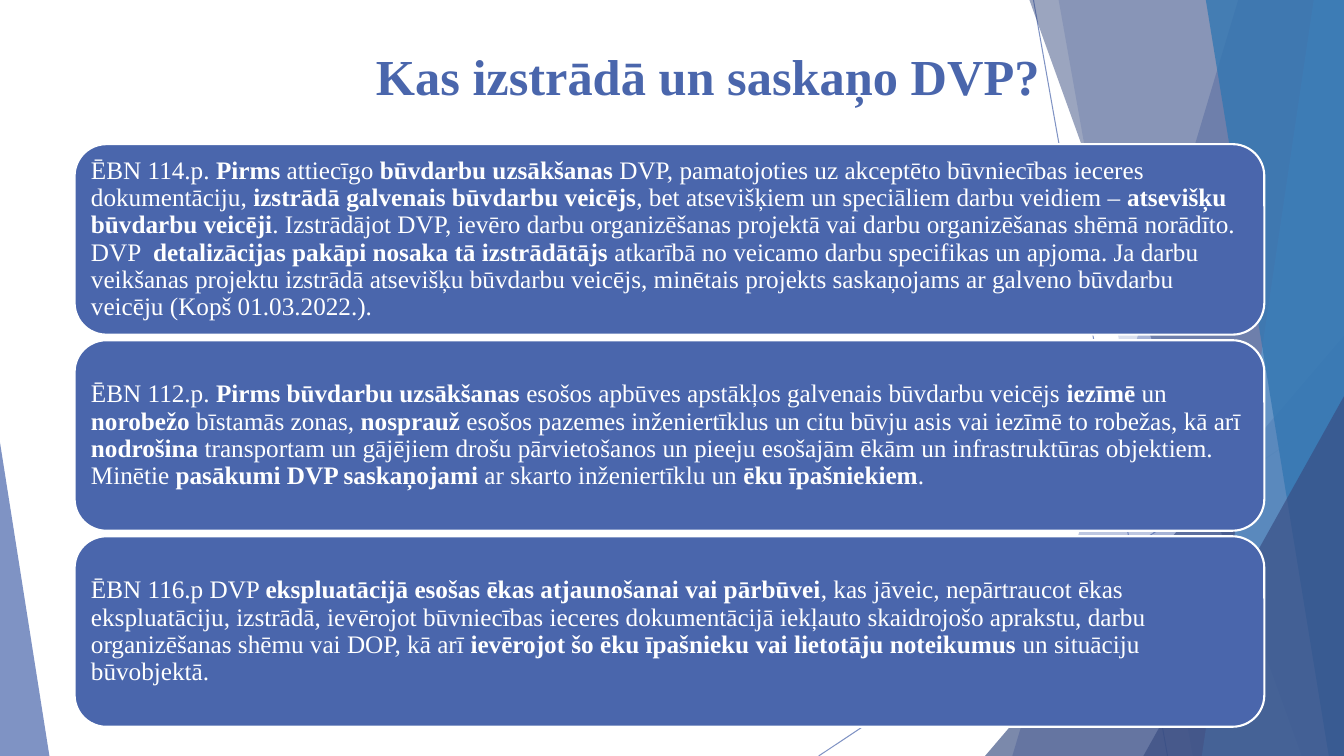
from lxml import etree
from pptx import Presentation
from pptx.dml.color import RGBColor
from pptx.enum.shapes import MSO_CONNECTOR, MSO_SHAPE
from pptx.enum.text import MSO_ANCHOR, PP_ALIGN
from pptx.oxml.ns import qn
from pptx.util import Inches, Pt

STRAIGHT = MSO_CONNECTOR.STRAIGHT
TRIANGLE = MSO_SHAPE.ISOSCELES_TRIANGLE
ROUNDED = MSO_SHAPE.ROUNDED_RECTANGLE
LEFT = PP_ALIGN.LEFT
TOP, MIDDLE = MSO_ANCHOR.TOP, MSO_ANCHOR.MIDDLE

BLUE = RGBColor(0x4A, 0x66, 0xAC)
NAVY = RGBColor(0x38, 0x4C, 0x81)
SKY = RGBColor(0x62, 0x9D, 0xD1)
OCEAN = RGBColor(0x34, 0x77, 0xB2)
WHITE = RGBColor(0xFF, 0xFF, 0xFF)
FONT = "Times New Roman"
WIDTH, HEIGHT = 13.33, 7.5

presentation = Presentation()
presentation.slide_width = Inches(WIDTH)
presentation.slide_height = Inches(HEIGHT)
slide = presentation.slides.add_slide(presentation.slide_layouts[6])
shapes = slide.shapes


def set_opacity(shape, percent):
    for color in shape._element.iter(qn("a:srgbClr")):
        etree.SubElement(color, qn("a:alpha")).set("val", str(percent * 1000))


def add_text(frame, text, anchor, inset, size, color, bold_first):
    frame.word_wrap = True
    frame.vertical_anchor = anchor
    for side, length in inset.items():
        setattr(frame, f"margin_{side}", Inches(length))
    paragraph = frame.paragraphs[0]
    paragraph.alignment = LEFT
    for index, part in enumerate(text.split("*")):
        run = paragraph.add_run()
        run.text = part
        run.font.color.rgb = color
        style = {"name": FONT, "size": Pt(size), "bold": (index % 2 == 1) != bold_first}
        for name, value in style.items():
            setattr(run.font, name, value)
    return paragraph


for start, end in [((10.25, 0), (11.58, HEIGHT)), ((WIDTH, 4.03), (8.12, HEIGHT))]:
    ray = shapes.add_connector(STRAIGHT, *map(Inches, start + end))
    ray.line.color.rgb = BLUE
    ray.line.width = Pt(0.75)
    set_opacity(ray, 70)
    etree.SubElement(ray._element.spPr, qn("a:effectLst"))

# Facets: ("band", top x, bottom x) or ("triangle", left, top, width, apex)
facets = [
    (("band", 12.28, 10.04), BLUE, 36),
    (("band", 10.5, 11.83), BLUE, 20),
    (("triangle", 9.77, 3.33, 3.56, 1), NAVY, 66),
    (("band", 10.21, 12.91), NAVY, 50),
    (("band", 13.03, 11.92), SKY, 70),
    (("band", 11.96, 13.18), OCEAN, 80),
    (("triangle", 11.34, 3.93, 1.99, 1), NAVY, 66),
    (("triangle", 0, 4.39, 0.49, 0), BLUE, 70),
]
for (kind, *geometry), color, opacity in facets:
    if kind == "band":
        top_x, bottom_x = geometry
        builder = shapes.build_freeform(Inches(top_x), 0)
        corners = [(WIDTH, 0), (WIDTH, HEIGHT), (bottom_x, HEIGHT)]
        builder.add_line_segments([(Inches(x), Inches(y)) for x, y in corners])
        facet = builder.convert_to_shape()
    else:
        left, top, width, apex = geometry
        facet = shapes.add_shape(TRIANGLE, *map(Inches, (left, top, width, HEIGHT - top)))
        facet.adjustments[0] = apex
    facet.shadow.inherit = False
    facet.fill.solid()
    facet.fill.fore_color.rgb = color
    facet.line.fill.background()
    set_opacity(facet, opacity)

title = shapes.add_textbox(*map(Inches, (3.63, 0.4, 8.78, 1.45)))
title_inset = {"left": 0.1, "right": 0.1, "top": 0.05, "bottom": 0.05}
add_text(title.text_frame, "Kas izstrādā un saskaņo DVP?", TOP, title_inset, 36, BLUE, True)

rules = [
    "ĒBN 114.p. *Pirms *attiecīgo* būvdarbu uzsākšanas *DVP, pamatojoties uz akceptēto "
    "būvniecības ieceres dokumentāciju, *izstrādā galvenais būvdarbu veicējs*, bet "
    "atsevišķiem un speciāliem darbu veidiem – *atsevišķu būvdarbu veicēji*. Izstrādājot "
    "DVP, ievēro darbu organizēšanas projektā vai darbu organizēšanas shēmā norādīto. "
    "DVP  *detalizācijas pakāpi nosaka tā izstrādātājs *atkarībā no veicamo darbu "
    "specifikas un apjoma. Ja darbu veikšanas projektu izstrādā atsevišķu būvdarbu "
    "veicējs, minētais projekts saskaņojams ar galveno būvdarbu veicēju (Kopš 01.03.2022.).",
    "ĒBN 112.p. *Pirms būvdarbu uzsākšanas* esošos apbūves apstākļos galvenais būvdarbu "
    "veicējs *iezīmē *un *norobežo *bīstamās zonas, *nosprauž* esošos pazemes "
    "inženiertīklus un citu būvju asis vai iezīmē to robežas, kā arī *nodrošina* "
    "transportam un gājējiem drošu pārvietošanos un pieeju esošajām ēkām un "
    "infrastruktūras objektiem. Minētie *pasākumi DVP saskaņojami* ar skarto "
    "inženiertīklu un *ēku īpašniekiem*.",
    "ĒBN 116.p DVP *ekspluatācijā esošas ēkas atjaunošanai vai pārbūvei*, kas jāveic, "
    "nepārtraucot ēkas ekspluatāciju, izstrādā, ievērojot būvniecības ieceres "
    "dokumentācijā iekļauto skaidrojošo aprakstu, darbu organizēšanas shēmu vai DOP, "
    "kā arī *ievērojot šo ēku īpašnieku vai lietotāju noteikumus* un situāciju būvobjektā.",
]
CARD_LEFT, CARD_TOP, CARD_WIDTH, CARD_HEIGHT, CARD_GAP = 0.74, 1.43, 11.8, 1.89, 0.055
card_inset = dict.fromkeys(("left", "right", "top", "bottom"), 0.07)
for row, rule in enumerate(rules):
    card_top = CARD_TOP + row * (CARD_HEIGHT + CARD_GAP)
    card = shapes.add_shape(
        ROUNDED, *map(Inches, (CARD_LEFT, card_top, CARD_WIDTH, CARD_HEIGHT)))
    card.shadow.inherit = False
    card.fill.solid()
    card.fill.fore_color.rgb = BLUE
    card.line.color.rgb = WHITE
    card.line.width = Pt(1.5)
    paragraph = add_text(card.text_frame, rule, MIDDLE, card_inset, 18, WHITE, False)
    paragraph.line_spacing = 0.9

presentation.save("out.pptx")
